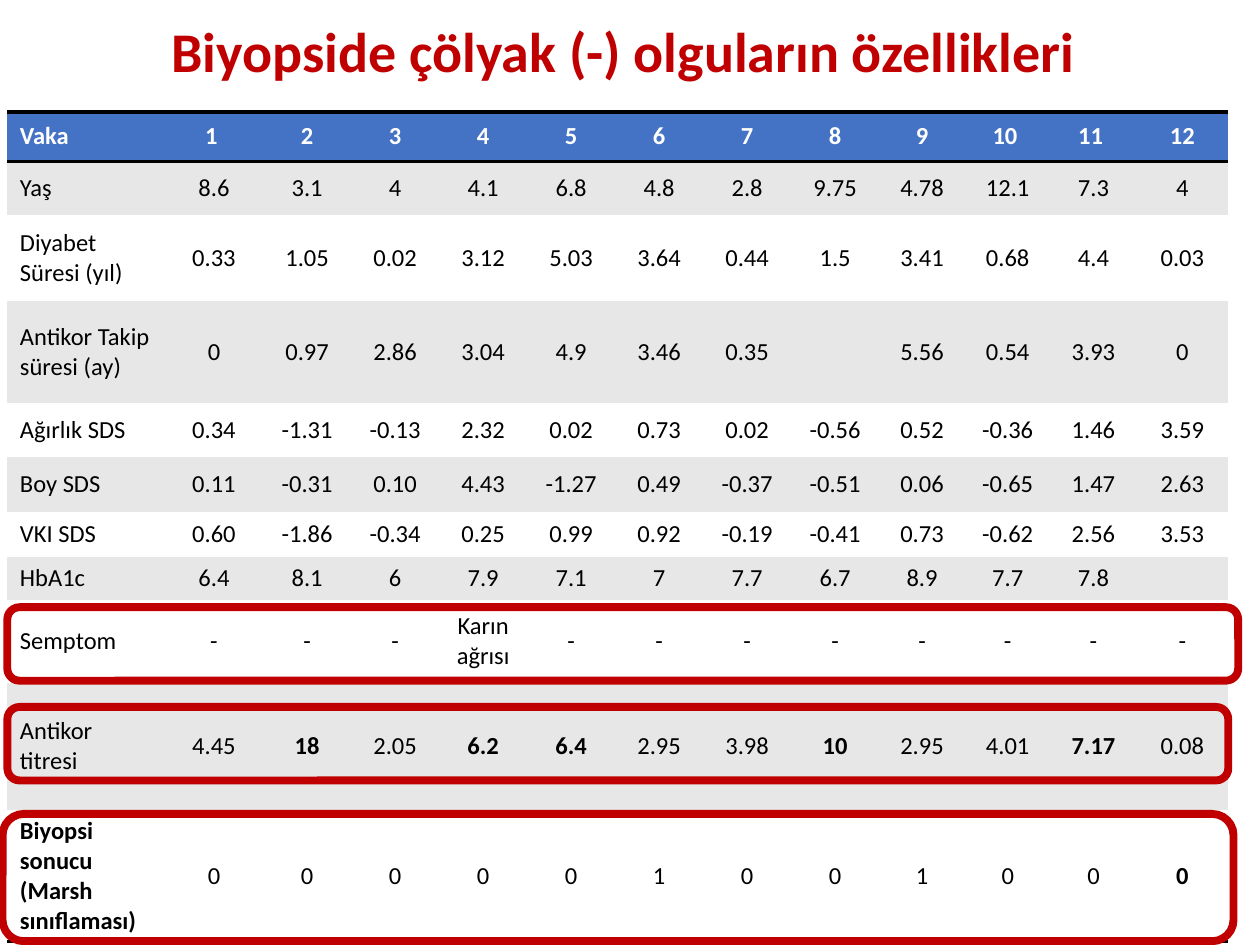
from lxml.etree import SubElement
from pptx import Presentation
from pptx.dml.color import RGBColor
from pptx.enum.shapes import MSO_SHAPE as Shape
from pptx.enum.text import MSO_ANCHOR as Anchor, PP_ALIGN as Align
from pptx.oxml import parse_xml
from pptx.oxml.ns import nsdecls, qn
from pptx.util import Pt

COLORS = {"red": "C00000", "blue": "4472C4", "gray": "E7E7E7", "white": "FFFFFF", "black": "000000"}
FONT = "Calibri"
NO_STYLE = "{2D5ABB26-0587-4C30-8999-92F81FD0307C}"


def format_font(font, size, color, bold):
    for name, value in {"name": FONT, "size": Pt(size), "bold": bold}.items():
        setattr(font, name, value)
    font.color.rgb = RGBColor.from_string(COLORS[color])


def add_border(cell, side):
    border = parse_xml(
        f'<a:{side} {nsdecls("a")} w="{Pt(2)}"><a:solidFill>'
        f'<a:srgbClr val="{COLORS["black"]}"/></a:solidFill></a:{side}>'
    )
    properties = cell._tc.get_or_add_tcPr()
    properties.insert(len(properties.findall(qn("a:lnT"))), border)


presentation = Presentation()
presentation.slide_width, presentation.slide_height = Pt(720), Pt(540)
slide = presentation.slides.add_slide(presentation.slide_layouts[5])

title = slide.shapes.title
for name, value in {"left": 90.7, "top": 6.5, "width": 662.4, "height": 49}.items():
    setattr(title, name, Pt(value))
title.text_frame.text = "Biyopside çölyak (-) olguların özellikleri"
title.text_frame.vertical_anchor = Anchor.MIDDLE
paragraph = title.text_frame.paragraphs[0]
paragraph.alignment = Align.LEFT
paragraph.line_spacing = 0.9
format_font(paragraph.runs[0].font, 32, "red", True)

rows = [
    (28.1, "Vaka", ["1 ", "2", "3", "4", "5", "6", "7", "8", "9", "10 ", "11 ", "12"]),
    (31, "Yaş", "8.6 3.1 4 4.1 6.8 4.8 2.8 9.75 4.78 12.1 7.3 4".split()),
    (49, "Diyabet Süresi (yıl)", "0.33 1.05 0.02 3.12 5.03 3.64 0.44 1.5 3.41 0.68 4.4 0.03".split()),
    (58.3, "Antikor Takip süresi (ay)", ["0", "0.97", "2.86", "3.04", "4.9", "3.46", "0.35", "", "5.56", "0.54", "3.93", "0"]),
    (31, "Ağırlık SDS", "0.34 -1.31 -0.13 2.32 0.02 0.73 0.02 -0.56 0.52 -0.36 1.46 3.59".split()),
    (31, "Boy SDS", "0.11 -0.31 0.10 4.43 -1.27 0.49 -0.37 -0.51 0.06 -0.65 1.47 2.63".split()),
    (26, "VKI SDS", "0.60 -1.86 -0.34 0.25 0.99 0.92 -0.19 -0.41 0.73 -0.62 2.56 3.53".split()),
    (24.4, "HbA1c", ["6.4", "8.1", "6", "7.9", "7.1", "7", "7.7", "6.7", "8.9", "7.7", "7.8", ""]),
    (47.5, "Semptom", ["-"] * 3 + ["Karın ağrısı"] + ["-"] * 8),
    (72.7, "Antikor titresi", "4.45 18 2.05 6.2 6.4 2.95 3.98 10 2.95 4.01 7.17 0.08".split()),
    (75, "Biyopsi sonucu\n(Marsh sınıflaması)", "0 0 0 0 0 1 0 0 1 0 0 0".split()),
]
column_widths = [90, 56.2] + [50.3] * 7 + [49] * 3 + [52.6]
last_row = len(rows) - 1
bold_cells = {(9, 2), (9, 4), (9, 5), (9, 8), (9, 11), (last_row, 0), (last_row, 12)}

frame = slide.shapes.add_table(
    len(rows), len(column_widths), Pt(4.2), Pt(64),
    Pt(sum(column_widths)), Pt(sum(row[0] for row in rows)),
)
table = frame.table
table.horz_banding = False
table._tbl.tblPr.find(qn("a:tableStyleId")).text = NO_STYLE
for column, width in zip(table.columns, column_widths):
    column.width = Pt(width)

for row_index, (height, label, values) in enumerate(rows):
    table.rows[row_index].height = Pt(height)
    header = row_index == 0
    fill = "blue" if header else "gray" if row_index % 2 else "white"
    for column_index, text in enumerate([label] + values):
        cell = table.cell(row_index, column_index)
        cell.text = text
        cell.vertical_anchor = Anchor.MIDDLE
        cell.fill.solid()
        cell.fill.fore_color.rgb = RGBColor.from_string(COLORS[fill])
        bold = header or (row_index, column_index) in bold_cells
        for paragraph in cell.text_frame.paragraphs:
            paragraph.alignment = Align.CENTER if column_index else Align.LEFT
            for run in paragraph.runs:
                format_font(run.font, 14, "white" if header else "black", bold)
            if not text:
                SubElement(paragraph._p, qn("a:endParaRPr"), sz="1400")
        if header:
            add_border(cell, "lnT")
        if row_index in (0, last_row):
            add_border(cell, "lnB")

for left, top, width, height in [
    (4.2, 347, 703.4, 42),
    (4.2, 404, 697.7, 42),
    (1.5, 465.1, 703.4, 72.7),
]:
    highlight = slide.shapes.add_shape(Shape.ROUNDED_RECTANGLE, Pt(left), Pt(top), Pt(width), Pt(height))
    highlight.shadow.inherit = False
    highlight.fill.background()
    highlight.line.color.rgb = RGBColor.from_string(COLORS["red"])
    highlight.line.width = Pt(4.5)

presentation.save("out.pptx")
